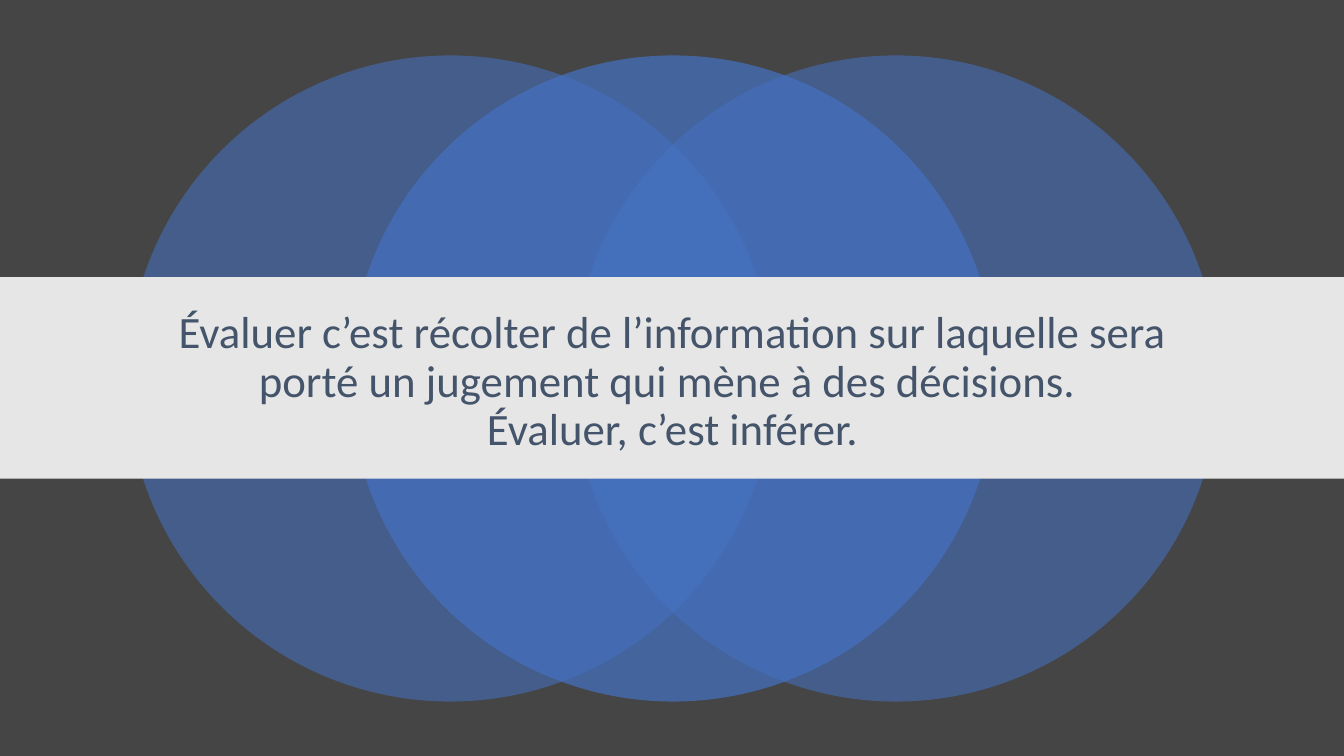
import pptx
import pptx.dml.color
import pptx.enum.shapes
import pptx.enum.text
import pptx.oxml.ns
import pptx.util
from lxml import etree
from pptx.util import Inches

SHAPE = pptx.enum.shapes.MSO_SHAPE
SLIDE_WIDTH, SLIDE_HEIGHT = 13.33, 7.5


def set_color(fill, color, opacity=100):
    """Fill with a hex colour; opacity is a percentage."""
    fill.solid()
    fill.fore_color.rgb = pptx.dml.color.RGBColor.from_string(color)
    if opacity < 100:
        color_element = fill._xPr.find(".//" + pptx.oxml.ns.qn("a:srgbClr"))
        alpha = etree.SubElement(color_element, pptx.oxml.ns.qn("a:alpha"))
        alpha.set("val", str(opacity * 1000))


def add_plain_shape(shapes, kind, left, top, width, height, color, opacity=100):
    shape = shapes.add_shape(kind, Inches(left), Inches(top), Inches(width), Inches(height))
    shape.shadow.inherit = False
    shape.line.fill.background()
    set_color(shape.fill, color, opacity)


def write_text(box, text, *, size, color, font, line_spacing):
    """Write one centred paragraph; a vertical tab in the text breaks the line."""
    frame = box.text_frame
    frame.word_wrap = True
    frame.auto_size = pptx.enum.text.MSO_AUTO_SIZE.NONE
    frame.vertical_anchor = pptx.enum.text.MSO_ANCHOR.MIDDLE
    para = frame.paragraphs[0]
    para.text = text
    para.alignment = pptx.enum.text.PP_ALIGN.CENTER
    para.line_spacing = line_spacing
    for span in para.runs:
        span.font.size = pptx.util.Pt(size)
        span.font.name = font
        set_color(span.font.fill, color)


def add_circles(slide, left, top, width, diameter):
    """Overlap three circles across the width, the middle one in front."""
    step = (width - diameter) / 2
    circles = slide.shapes.add_group_shape().shapes
    for position, opacity in ((0, 55), (2, 55), (1, 70)):
        add_plain_shape(circles, SHAPE.OVAL, left + position * step, top,
                        diameter, diameter, "4472C4", opacity)


def add_title_band(slide, left, top, width, height):
    add_plain_shape(slide.shapes, SHAPE.RECTANGLE, left, top, width, height, "E7E6E6")
    title = slide.shapes.title
    title.left, title.top = Inches(left + 1.67), Inches(top + 0.29)
    title.width, title.height = Inches(10), Inches(1.51)
    write_text(
        title,
        "Évaluer c’est récolter de l’information sur laquelle sera porté un jugement "
        "qui mène à des décisions. \vÉvaluer, c’est inférer.",
        size=32, color="44546A", font="Calibri", line_spacing=0.9)
    # Bring the title in front of the band
    title.element.getparent().append(title.element)


def main():
    deck = pptx.Presentation()
    deck.slide_width, deck.slide_height = Inches(SLIDE_WIDTH), Inches(SLIDE_HEIGHT)
    page = deck.slides.add_slide(deck.slide_layouts[5])
    set_color(page.background.fill, "454545")
    add_circles(page, 1.26, 0.55, 10.83, 6.41)
    add_title_band(page, 0, 2.75, SLIDE_WIDTH, 2)
    deck.save("out.pptx")


if __name__ == "__main__":
    main()
